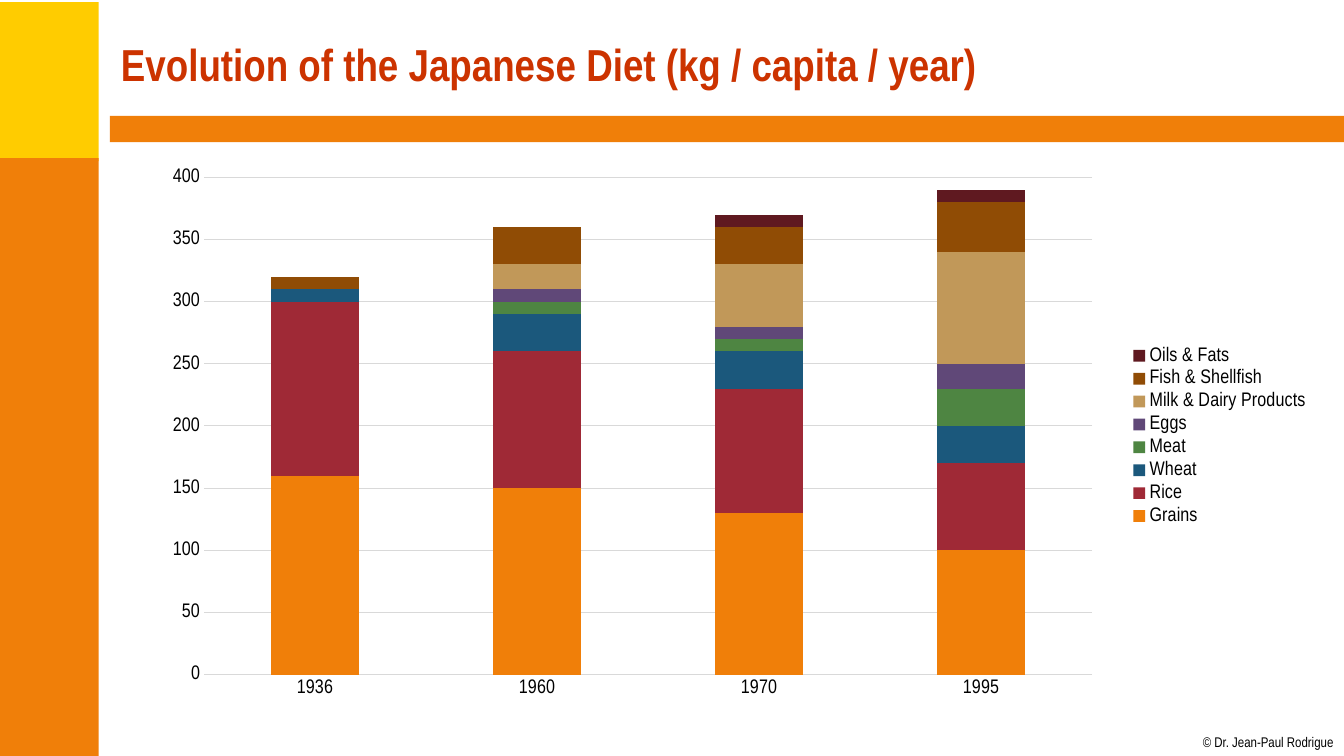
from lxml import etree
from pptx import Presentation
from pptx.chart.data import CategoryChartData
from pptx.dml.color import RGBColor
from pptx.enum.chart import XL_CHART_TYPE as ChartType
from pptx.enum.chart import XL_LEGEND_POSITION as LegendPosition
from pptx.enum.chart import XL_TICK_MARK as TickMark
from pptx.enum.shapes import MSO_SHAPE as Shape
from pptx.enum.text import MSO_ANCHOR as Anchor
from pptx.enum.text import MSO_AUTO_SIZE as AutoSize
from pptx.enum.text import PP_ALIGN as Align
from pptx.oxml.ns import qn
from pptx.util import Inches, Pt

FONT = "Arial Narrow"
COLORS = {
    "yellow": "FFCC00",
    "orange": "F07F09",
    "title": "CC3300",
    "text": "000000",
    "grid": "D9D9D9",
    "rice": "9F2936",
    "wheat": "1B587C",
    "meat": "4E8542",
    "eggs": "604878",
    "milk": "C19859",
    "fish": "904C05",
    "oils": "5F1920",
}
YEARS = ["1936", "1960", "1970", "1995"]
FOODS = [
    ("Grains", "orange", (160, 150, 130, 100)),
    ("Rice", "rice", (140, 110, 100, 70)),
    ("Wheat", "wheat", (10, 30, 30, 30)),
    ("Meat", "meat", (0, 10, 10, 30)),
    ("Eggs", "eggs", (0, 10, 10, 20)),
    ("Milk & Dairy Products", "milk", (0, 20, 50, 90)),
    ("Fish & Shellfish", "fish", (10, 30, 30, 40)),
    ("Oils & Fats", "oils", (0, 0, 10, 10)),
]
PLOT_AREA = {"x": 0.077, "y": 0.057, "w": 0.734, "h": 0.852}


def rgb(name):
    return RGBColor.from_string(COLORS[name])


def style_font(font, size, color="text", bold=False):
    font.name = FONT
    font.size = Pt(size)
    font.bold = bold
    font.color.rgb = rgb(color)


def add_band(slide, color, left, top, width, height):
    band = slide.shapes.add_shape(
        Shape.RECTANGLE, Inches(left), Inches(top), Inches(width), Inches(height))
    band.shadow.inherit = False
    band.fill.solid()
    band.fill.fore_color.rgb = rgb(color)
    band.line.fill.background()


def set_title(slide, text):
    title = slide.shapes.title
    title.left, title.top = Inches(1.1), Inches(0.11)
    title.width, title.height = Inches(12), Inches(1.04)
    frame = title.text_frame
    frame.text = text
    frame.auto_size = AutoSize.NONE
    frame.vertical_anchor = Anchor.MIDDLE
    heading = frame.paragraphs[0]
    heading.alignment = Align.LEFT
    style_font(heading.font, 32, "title", True)


def add_credit(slide, text):
    box = slide.shapes.add_textbox(
        Inches(11.93), Inches(7.28), Inches(1.3), Inches(0.17))
    frame = box.text_frame
    frame.margin_left = frame.margin_right = 0
    frame.margin_top = frame.margin_bottom = 0
    frame.word_wrap = False
    frame.text = text
    style_font(frame.paragraphs[0].font, 10)


def fix_plot_area(chart):
    plot_area = chart._chartSpace.find(".//" + qn("c:plotArea"))
    for automatic in plot_area.findall(qn("c:layout")):
        plot_area.remove(automatic)
    layout = etree.Element(qn("c:layout"))
    manual = etree.SubElement(layout, qn("c:manualLayout"))
    settings = [("layoutTarget", "inner"), ("xMode", "edge"), ("yMode", "edge")]
    for tag, value in settings + list(PLOT_AREA.items()):
        etree.SubElement(manual, qn(f"c:{tag}")).set("val", str(value))
    plot_area.insert(0, layout)


def style_axes(chart):
    years, amounts = chart.category_axis, chart.value_axis
    for axis in (years, amounts):
        axis.major_tick_mark = axis.minor_tick_mark = TickMark.NONE
        style_font(axis.tick_labels.font, 14)
    amounts.minimum_scale, amounts.maximum_scale = 0, 400
    amounts.major_unit = 50
    amounts.format.line.fill.background()
    for line in (years.format.line, amounts.major_gridlines.format.line):
        line.color.rgb = rgb("grid")
        line.width = Pt(0.75)


def add_diet_chart(slide):
    diet = CategoryChartData()
    diet.categories = YEARS
    for name, _, amounts in FOODS:
        diet.add_series(name, amounts)
    chart = slide.shapes.add_chart(
        ChartType.COLUMN_STACKED, Inches(1.1), Inches(1.43),
        Inches(12), Inches(5.79), diet).chart
    chart.has_title = False
    style_font(chart.font, 14)
    chart.has_legend = True
    chart.legend.position = LegendPosition.RIGHT
    chart.legend.include_in_layout = False
    style_font(chart.legend.font, 14)
    columns = chart.plots[0]
    columns.gap_width, columns.overlap = 150, 100
    columns.vary_by_categories = False
    for series, (_, color, _) in zip(columns.series, FOODS):
        series.format.fill.solid()
        series.format.fill.fore_color.rgb = rgb(color)
    style_axes(chart)
    fix_plot_area(chart)


def main():
    deck = Presentation()
    deck.slide_width, deck.slide_height = Inches(13.33), Inches(7.5)
    slide = deck.slides.add_slide(deck.slide_layouts[5])
    add_band(slide, "yellow", -0.02, 0.02, 1, 1.58)
    add_band(slide, "orange", -0.02, 1.57, 1, 5.93)
    add_band(slide, "orange", 1.09, 1.15, 12.24, 0.26)
    add_credit(slide, "© Dr. Jean-Paul Rodrigue")
    set_title(slide, "Evolution of the Japanese Diet (kg / capita / year)")
    add_diet_chart(slide)
    deck.save("out.pptx")


if __name__ == "__main__":
    main()
